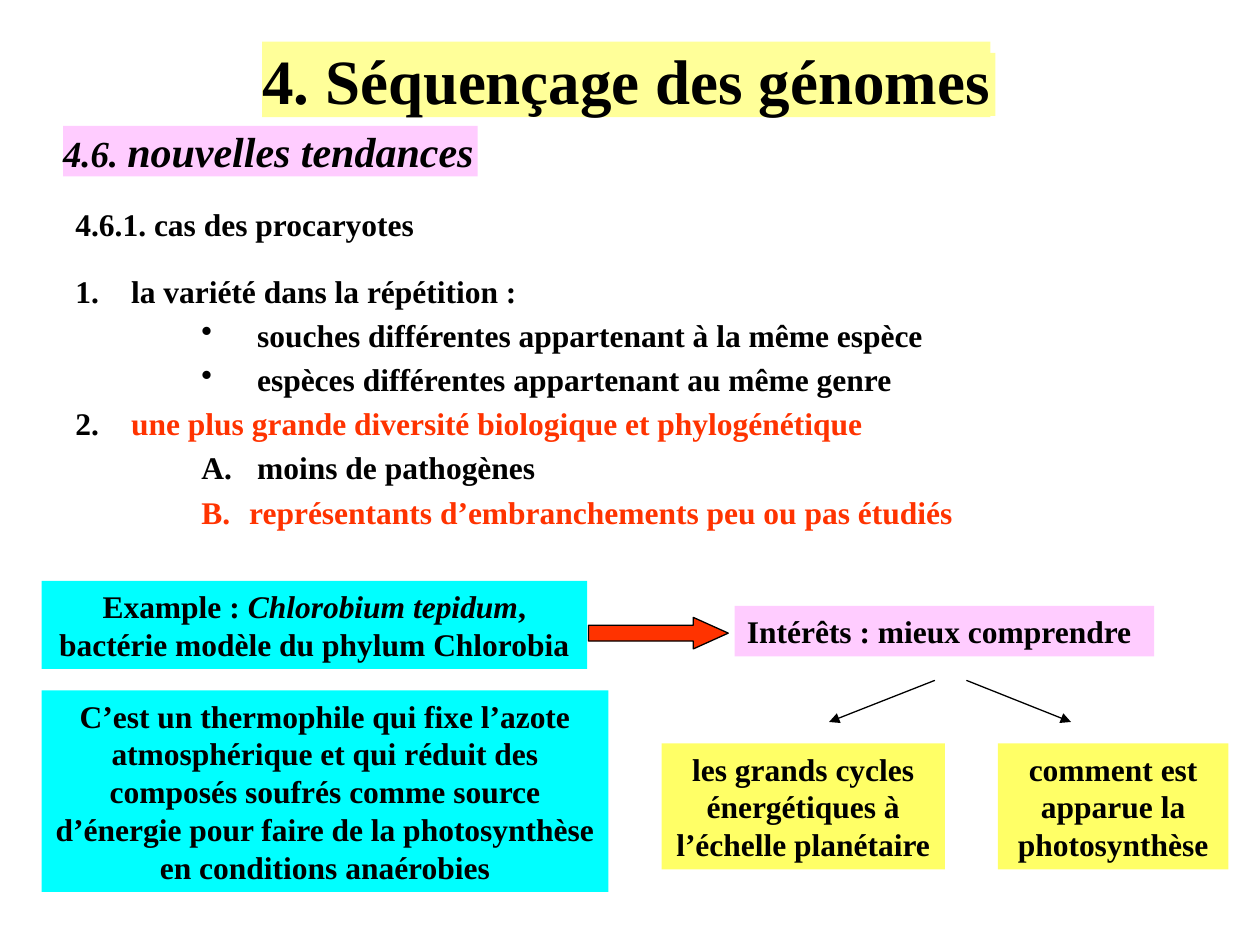
from lxml import etree
from pptx import Presentation
from pptx.dml.color import RGBColor
from pptx.enum.shapes import MSO_CONNECTOR, MSO_SHAPE
from pptx.enum.text import MSO_AUTO_SIZE, PP_ALIGN
from pptx.oxml.ns import qn
from pptx.util import Inches, Pt

BLACK = RGBColor(0x00, 0x00, 0x00)
WHITE = RGBColor(0xFF, 0xFF, 0xFF)
RED = RGBColor(0xFF, 0x33, 0x00)
CYAN = RGBColor(0x00, 0xFF, 0xFF)
PINK = RGBColor(0xFF, 0xCC, 0xFF)
PALE_YELLOW = RGBColor(0xFF, 0xFF, 0x99)
YELLOW = RGBColor(0xFF, 0xFF, 0x66)

BASE_FONT = {"name": "Times New Roman", "size": Pt(18), "bold": True}


def add_runs(paragraph, runs):
    """Add (text, format) pairs; each format overrides the base font."""
    for text, changes in runs:
        run = paragraph.add_run()
        run.text = text
        font_format = {**BASE_FONT, **changes}
        color = font_format.pop("color", BLACK)
        for attribute, value in font_format.items():
            setattr(run.font, attribute, value)
        run.font.color.rgb = color


def add_text_box(shapes, box, runs=(), fill=None, wrap=True, inset=True,
                 alignment=PP_ALIGN.LEFT):
    shape = shapes.add_textbox(*map(Inches, box))
    if fill is not None:
        shape.fill.solid()
        shape.fill.fore_color.rgb = fill
    frame = shape.text_frame
    frame.word_wrap = wrap
    frame.auto_size = MSO_AUTO_SIZE.SHAPE_TO_FIT_TEXT
    if not inset:
        for side in ("left", "top", "right", "bottom"):
            setattr(frame, f"margin_{side}", 0)
    frame.paragraphs[0].alignment = alignment
    add_runs(frame.paragraphs[0], runs)
    return shape


def format_list_item(paragraph, level, numbering):
    """Set indent, 20 % space before and a bullet or automatic number."""
    paragraph.level = level
    properties = paragraph._p.get_or_add_pPr()
    properties.set("marL", str(Inches(0.38 + level)))
    properties.set("indent", str(Inches(-0.38)))
    space = etree.SubElement(properties, qn("a:spcBef"))
    etree.SubElement(space, qn("a:spcPct")).set("val", "20000")
    if numbering == "•":
        etree.SubElement(properties, qn("a:buChar")).set("char", numbering)
    else:
        etree.SubElement(properties, qn("a:buAutoNum")).set("type", numbering)


def add_outline(shapes, box, items):
    frame = add_text_box(shapes, box).text_frame
    for index, (level, numbering, runs) in enumerate(items):
        paragraph = frame.add_paragraph() if index else frame.paragraphs[0]
        format_list_item(paragraph, level, numbering)
        add_runs(paragraph, runs)


def add_title(shapes, box):
    left, top, width, height = box
    group = shapes.add_group_shape()
    band = group.shapes.add_shape(
        MSO_SHAPE.RECTANGLE,
        *map(Inches, (left, top + 0.09, width + 0.04, height - 0.1)))
    band.shadow.inherit = False
    band.fill.solid()
    band.fill.fore_color.rgb = PALE_YELLOW
    band.line.fill.background()
    add_text_box(group.shapes, box,
                 [("4. Séquençage des génomes", {"size": Pt(36)})],
                 PALE_YELLOW, wrap=False, inset=False)


def add_block_arrow(shapes, box):
    arrow = shapes.add_shape(MSO_SHAPE.RIGHT_ARROW, *map(Inches, box))
    arrow.adjustments[0] = 0.5
    arrow.adjustments[1] = 1.11
    arrow.shadow.inherit = False
    arrow.fill.solid()
    arrow.fill.fore_color.rgb = RED
    arrow.line.color.rgb = BLACK
    arrow.line.width = Pt(0.75)


def add_thin_arrow(shapes, start, end):
    connector = shapes.add_connector(
        MSO_CONNECTOR.STRAIGHT, *map(Inches, (*start, *end)))
    connector.line.color.rgb = BLACK
    connector.line.width = Pt(0.75)
    properties = connector._element.spPr
    line = properties.find(qn("a:ln"))
    etree.SubElement(line, qn("a:tailEnd")).set("type", "triangle")
    etree.SubElement(properties, qn("a:effectLst"))


def add_headings(shapes):
    add_title(shapes, (2.08, 0.33, 5.78, 0.6))
    add_text_box(shapes, (0.5, 1, 3.29, 0.4),
                 [("4.6. ", {"size": Pt(21), "italic": True}),
                  ("nouvelles tendances", {"size": Pt(24), "italic": True})],
                 PINK, wrap=False, inset=False)
    add_text_box(shapes, (0.5, 1.58, 2.9, 0.4),
                 [("4.6.1. cas des procaryotes", {})], WHITE, wrap=False)


def add_example(shapes, left, top):
    example = [("Example : ", {}), ("Chlorobium tepidum", {"italic": True}),
               (", bactérie modèle du phylum Chlorobia", {})]
    details = [("C’est un thermophile qui fixe l’azote atmosphérique et qui "
                "réduit des composés soufrés comme source d’énergie pour faire "
                "de la photosynthèse en conditions anaérobies", {})]
    for box, runs in (((left, top, 4.33, 0.7), example),
                      ((left, top + 0.87, 4.5, 1.6), details)):
        add_text_box(shapes, box, runs, CYAN, alignment=PP_ALIGN.CENTER)


def add_interests(shapes, left, top):
    add_text_box(shapes, (left + 0.58, top, 3.33, 0.4),
                 [("Intérêts : mieux comprendre", {})], PINK, wrap=False)
    branches = (
        (0, 2.25, "les grands cycles énergétiques à l’échelle planétaire",
         2.17, 1.33),
        (2.67, 1.83, "comment est apparue la photosynthèse", 2.42, 3.25),
    )
    for offset, width, text, start, end in branches:
        add_text_box(shapes, (left + offset, top + 1.09, width, 1),
                     [(text, {})], YELLOW, alignment=PP_ALIGN.CENTER)
        add_thin_arrow(shapes, (left + start, top + 0.59),
                       (left + end, top + 0.92))


def main():
    presentation = Presentation()
    presentation.slide_width = Inches(10)
    presentation.slide_height = Inches(7.5)
    slide = presentation.slides.add_slide(presentation.slide_layouts[6])
    shapes = slide.shapes

    red = {"color": RED}
    add_outline(shapes, (0.5, 2.11, 8.83, 2.21), [
        (0, "arabicPeriod", [(" la variété dans la répétition :", {})]),
        (1, "•", [(" souches différentes appartenant à la même espèce", {})]),
        (1, "•", [(" espèces différentes appartenant au même genre", {})]),
        (0, "arabicPeriod", [
            (" ", {}),
            ("une plus grande diversité biologique et phylogénétique", red)]),
        (1, "alphaUcPeriod", [(" moins de pathogènes", {})]),
        (1, "alphaUcPeriod", [
            ("représentants d’embranchements peu ou pas étudiés", red)]),
    ])
    add_headings(shapes)
    add_example(shapes, 0.33, 4.61)
    add_interests(shapes, 5.25, 4.81)
    add_block_arrow(shapes, (4.67, 4.9, 1.11, 0.25))
    presentation.save("out.pptx")


if __name__ == "__main__":
    main()
